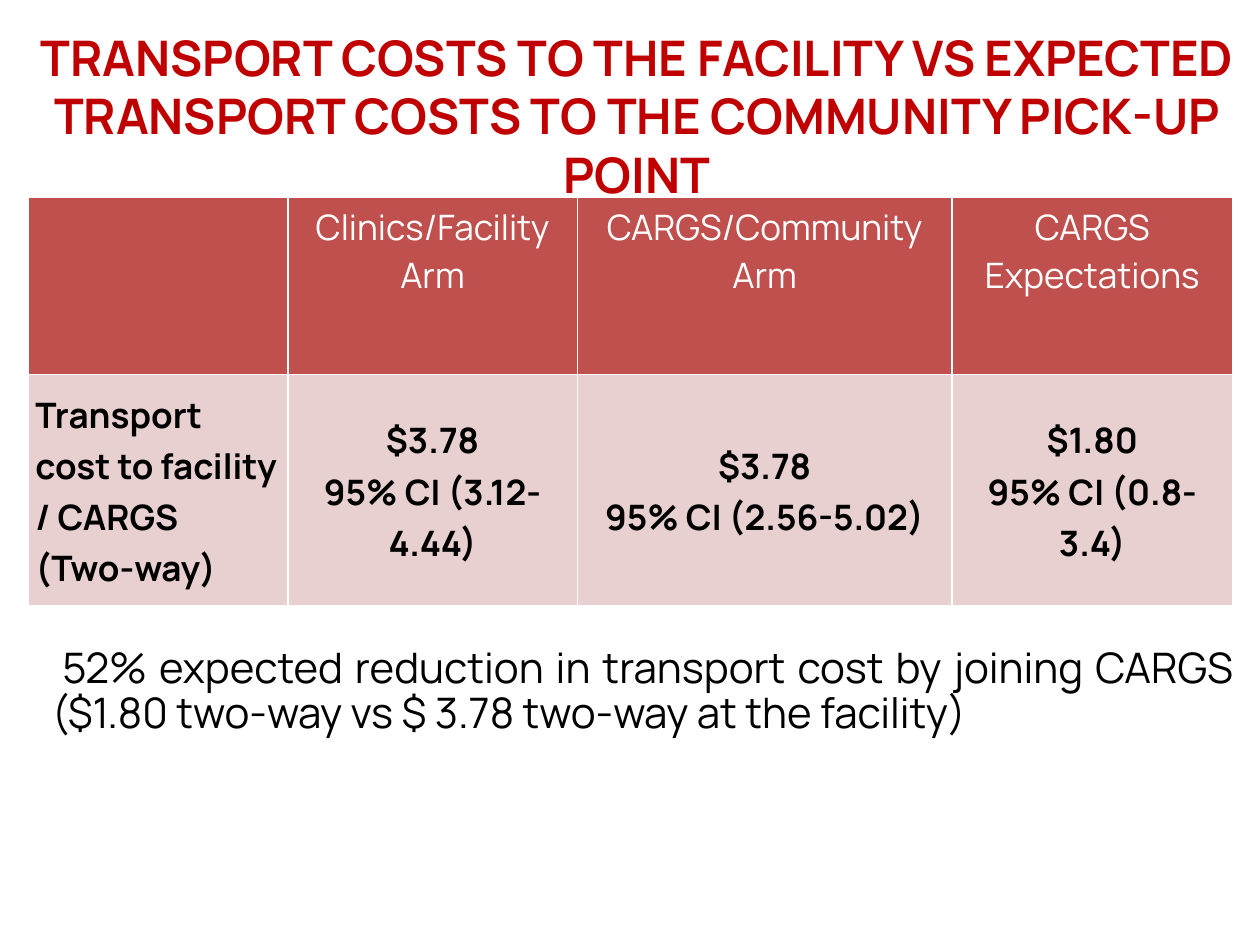
import pptx
import pptx.util
import pptx.dml.color
import pptx.enum.text
from lxml import etree

Pt = pptx.util.Pt
RGB = pptx.dml.color.RGBColor
Align = pptx.enum.text.PP_ALIGN
Anchor = pptx.enum.text.MSO_ANCHOR

RED = RGB(0xC0, 0x00, 0x00)
BRICK = RGB(0xC0, 0x50, 0x4D)
BLUSH = RGB(0xE8, 0xD0, 0xD0)
WHITE = RGB(0xFF, 0xFF, 0xFF)
BLACK = RGB(0x00, 0x00, 0x00)
FACE = "Manrope"

TITLE = ("TRANSPORT COSTS TO THE FACILITY VS EXPECTED "
         "TRANSPORT COSTS TO THE COMMUNITY PICK-UP POINT")
NOTE = ("52% expected reduction in transport cost by joining CARGS "
        "($1.80 two-way vs $ 3.78 two-way at the facility)")
ROWS = [
    [[], ["Clinics/Facility Arm"], ["CARGS/Community Arm"],
     ["CARGS Expectations"]],
    [["Transport cost to facility / CARGS", "(Two-way)"],
     ["$3.78", "95% CI (3.12-4.44)"],
     ["$3.78", "95% CI (2.56-5.02)"],
     ["$1.80", "95% CI (0.8-3.4)"]],
]
WIDTHS = [148.5, 165.5, 214, 160.5]
HEIGHTS = [101, 132]
HEAD = {"fill": BRICK, "font": {"size": Pt(20), "color": WHITE},
        "para": {}, "anchor": Anchor.TOP, "pad": (5.2, 2.9)}
BODY = {"fill": BLUSH, "font": {"size": Pt(20), "color": BLACK, "bold": True},
        "para": {"line_spacing": 1.07}, "anchor": Anchor.MIDDLE,
        "pad": (4.3, 0)}


def write(frame, lines, font, para):
    """Fill a text frame with one paragraph for each line."""
    for i, line in enumerate(lines):
        p = frame.add_paragraph() if i else frame.paragraphs[0]
        for key, value in para.items():
            setattr(p, key, value)
        run = p.add_run()
        run.text = line
        run.font.name = FACE
        for key, value in font.items():
            if key == "color":
                run.font.color.rgb = value
            else:
                setattr(run.font, key, value)


def label(slide, box, text, font, para):
    shape = slide.shapes.add_textbox(*map(Pt, box))
    shape.text_frame.word_wrap = True
    write(shape.text_frame, [text], font, para)
    return shape.text_frame.paragraphs[0]


def border(cell):
    props = cell._tc.get_or_add_tcPr()
    space = props.nsmap["a"]
    for side in "LRTB":
        line = etree.SubElement(props, f"{{{space}}}ln{side}", w=str(Pt(1)))
        fill = etree.SubElement(line, f"{{{space}}}solidFill")
        etree.SubElement(fill, f"{{{space}}}srgbClr", val=str(WHITE))


def style(cell, lines, look, align):
    border(cell)
    cell.fill.solid()
    cell.fill.fore_color.rgb = look["fill"]
    cell.vertical_anchor = look["anchor"]
    across, down = map(Pt, look["pad"])
    cell.margin_left = cell.margin_right = across
    cell.margin_top = cell.margin_bottom = down
    write(cell.text_frame, lines, look["font"],
          {"alignment": align, **look["para"]})


def main():
    deck = pptx.Presentation()
    deck.slide_width, deck.slide_height = Pt(720), Pt(540)
    slide = deck.slides.add_slide(deck.slide_layouts[6])

    table = slide.shapes.add_table(
        len(ROWS), len(WIDTHS), Pt(16), Pt(113),
        Pt(sum(WIDTHS)), Pt(sum(HEIGHTS))).table
    for col, width in zip(table.columns, WIDTHS):
        col.width = Pt(width)
    for r, (row, look) in enumerate(zip(ROWS, (HEAD, BODY))):
        table.rows[r].height = Pt(HEIGHTS[r])
        for c, lines in enumerate(row):
            style(table.cell(r, c), lines, look,
                  Align.CENTER if c else Align.LEFT)

    label(slide, (0, 12, 728, 75), TITLE,
          {"size": Pt(28), "color": RED, "bold": True},
          {"alignment": Align.CENTER})
    note = label(slide, (22.5, 366, 689.5, 76), NOTE,
                 {"size": Pt(24), "color": BLACK},
                 {"alignment": Align.JUSTIFY, "line_spacing": 0.9,
                  "space_before": Pt(4.8)})
    note._p.get_or_add_pPr().set("indent", str(Pt(6)))

    deck.save("out.pptx")


if __name__ == "__main__":
    main()
